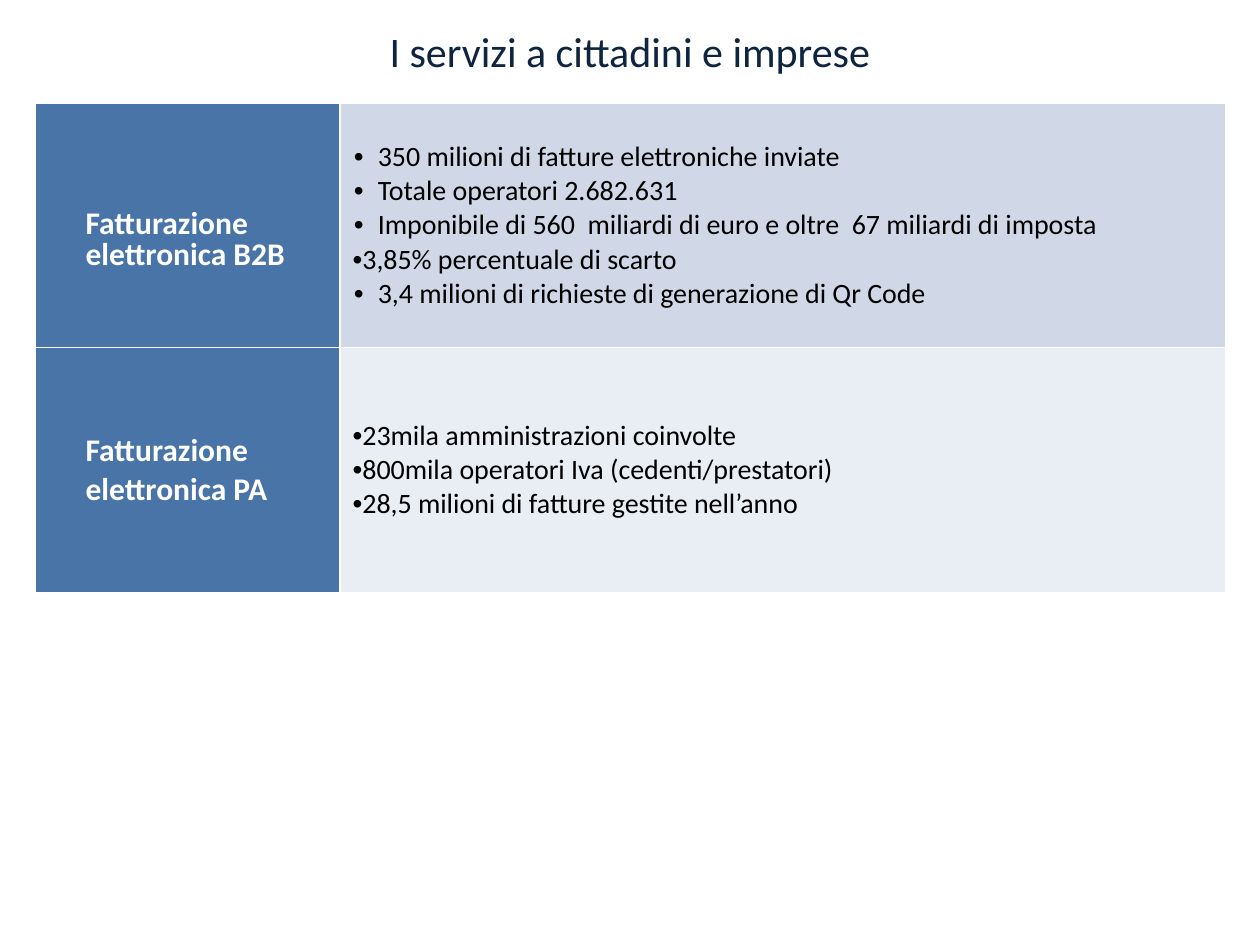
from lxml.etree import SubElement
from pptx import Presentation
from pptx.dml.color import RGBColor
from pptx.enum.text import MSO_ANCHOR, PP_ALIGN
from pptx.oxml.ns import qn
from pptx.util import Inches, Pt

WIDTH, HEIGHT = 10, 7.5
FONT = "Calibri"
COLORS = {
    "title": "0F243E",
    "label": "4874A8",
    "light": "FFFFFF",
    "text": "000000",
    "band_dark": "D0D8E8",
    "band_pale": "E9EDF4",
}
TITLE_BOX = (0.118, 0.02, 0.764, 0.067)
TABLE_BOX = (0.028, 0.109, 0.945, 0.518)
LABEL_SHARE = 0.256
LABEL_INDENT, BULLET_INDENT, BULLET_HANG = 0.3, 0.2, -0.19

SERVICES = [
    {
        "label": ["Fatturazione", "elettronica B2B"],
        "spacing": 0.8,
        "top": 0.3,
        "band": "band_dark",
        "facts": [
            ("350 milioni di fatture elettroniche inviate", BULLET_INDENT),
            ("Totale operatori 2.682.631", BULLET_INDENT),
            ("Imponibile di 560  miliardi di euro e oltre  67 miliardi di imposta", BULLET_INDENT),
            ("3,85% percentuale di scarto", 0),
            ("3,4 milioni di richieste di generazione di Qr Code", BULLET_INDENT),
        ],
    },
    {
        "label": ["Fatturazione", "elettronica PA"],
        "spacing": 1.0,
        "top": 0.05,
        "band": "band_pale",
        "facts": [
            ("23mila amministrazioni coinvolte", 0),
            ("800mila operatori Iva (cedenti/prestatori)", 0),
            ("28,5 milioni di fatture gestite nell’anno", 0),
        ],
    },
]


def place(box):
    left, top, width, height = box
    return (Inches(left * WIDTH), Inches(top * HEIGHT),
            Inches(width * WIDTH), Inches(height * HEIGHT))


def add_span(para, text, size, color, bold=False):
    span = para.add_run()
    span.text = text
    span.font.name = FONT
    span.font.size = Pt(size)
    span.font.bold = bold
    span.font.color.rgb = RGBColor.from_string(COLORS[color])


def next_para(frame, index):
    return frame.add_paragraph() if index else frame.paragraphs[0]


def set_indent(para, margin, hang=0, bullet=None):
    properties = para._p.get_or_add_pPr()
    properties.set("marL", str(Inches(margin)))
    properties.set("indent", str(Inches(hang)))
    if bullet:
        SubElement(properties, qn("a:buFont"), typeface="Arial")
        SubElement(properties, qn("a:buChar"), char=bullet)


def style_cell(cell, fill):
    cell.vertical_anchor = MSO_ANCHOR.MIDDLE
    properties = cell._tc.get_or_add_tcPr()
    for side in ("lnL", "lnR", "lnT", "lnB"):
        line = SubElement(properties, qn(f"a:{side}"), w=str(Pt(1)))
        solid = SubElement(line, qn("a:solidFill"))
        SubElement(solid, qn("a:srgbClr"), val=COLORS["light"])
    cell.fill.solid()
    cell.fill.fore_color.rgb = RGBColor.from_string(COLORS[fill])


def add_title(page, box, text):
    frame = page.shapes.add_textbox(*place(box)).text_frame
    frame.word_wrap = True
    para = frame.paragraphs[0]
    para.alignment = PP_ALIGN.CENTER
    add_span(para, text, 24, "title")


def fill_label(cell, service):
    style_cell(cell, "label")
    cell.margin_top = Inches(service["top"])
    for index, text in enumerate(service["label"]):
        para = next_para(cell.text_frame, index)
        para.line_spacing = service["spacing"]
        set_indent(para, LABEL_INDENT)
        add_span(para, text, 18, "light", bold=True)


def fill_facts(cell, service):
    style_cell(cell, service["band"])
    for index, (text, margin) in enumerate(service["facts"]):
        para = next_para(cell.text_frame, index)
        set_indent(para, margin, BULLET_HANG, "•")
        add_span(para, text, 16, "text")


def add_services(page, box, services):
    left, top, width, height = place(box)
    table = page.shapes.add_table(len(services), 2, left, top, width, height).table
    table.first_row = False
    table.horz_banding = False
    table.columns[0].width = int(width * LABEL_SHARE)
    table.columns[1].width = width - table.columns[0].width
    for row, service in enumerate(services):
        fill_label(table.cell(row, 0), service)
        fill_facts(table.cell(row, 1), service)


def main():
    deck = Presentation()
    deck.slide_width, deck.slide_height = Inches(WIDTH), Inches(HEIGHT)
    page = deck.slides.add_slide(deck.slide_layouts[6])
    add_services(page, TABLE_BOX, SERVICES)
    add_title(page, TITLE_BOX, "I servizi a cittadini e imprese")
    deck.save("out.pptx")


if __name__ == "__main__":
    main()
